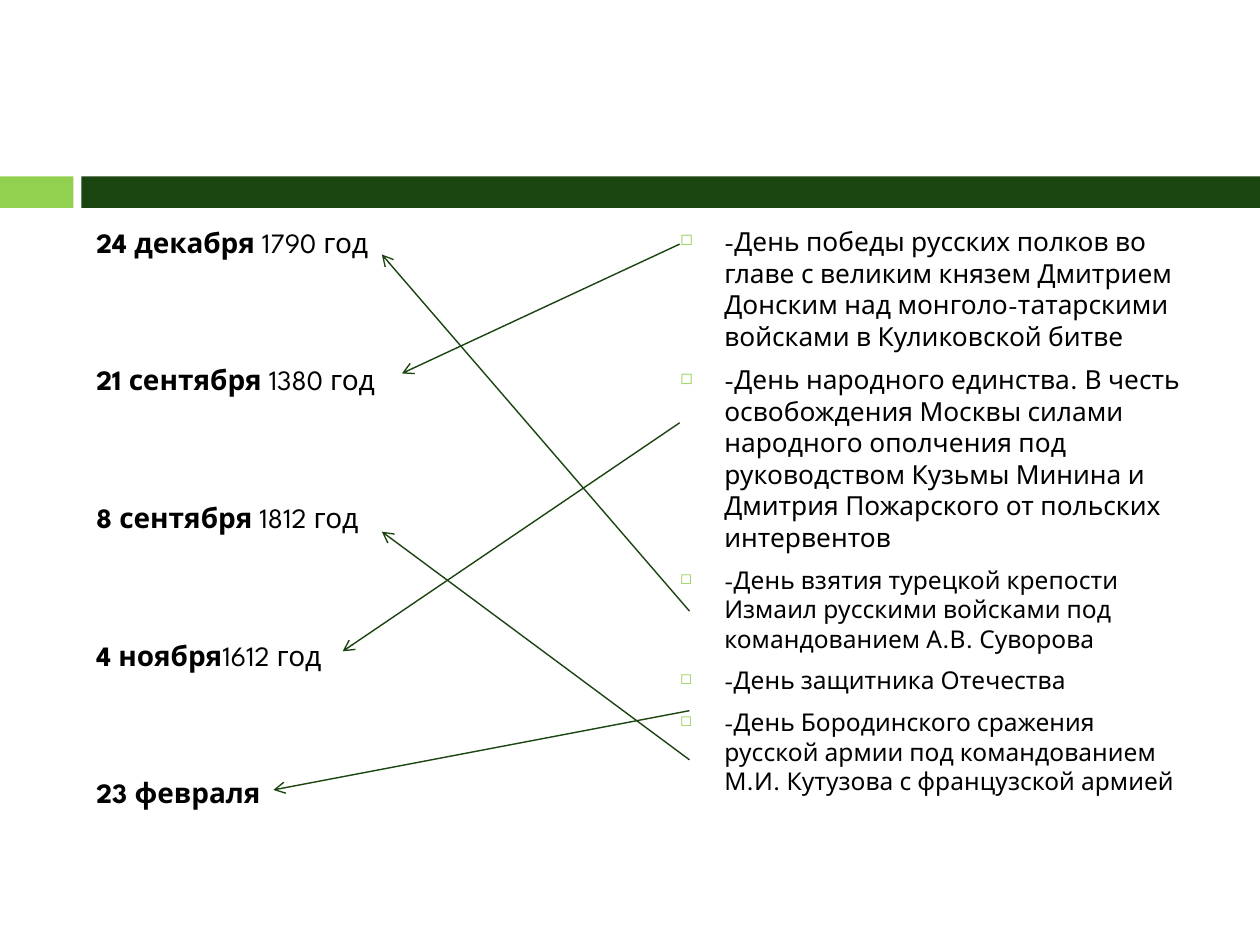
from lxml.etree import SubElement
from pptx import Presentation
from pptx.dml.color import RGBColor
from pptx.enum.shapes import MSO_CONNECTOR as CONN, MSO_SHAPE as SHAPE
from pptx.oxml.ns import qn
from pptx.util import Pt

FONT = "League Spartan"
GREEN, LIME, BLACK = "1A4410", "92D050", "000000"
TEXT_TOP, TEXT_WIDTH = 125.3, 306

DATES = [
    ("24 декабря", " 1790 год"),
    ("21 сентября", " 1380 год"),
    ("8 сентября", " 1812 год"),
    ("4 ноября", "1612 год"),
    ("23 февраля", ""),
]
EVENTS = [
    ("-День победы русских полков во главе с великим князем Дмитрием Донским "
     "над монголо-татарскими войсками в Куликовской битве", 15),
    ("-День народного единства. В честь освобождения Москвы силами народного "
     "ополчения под руководством Кузьмы Минина и Дмитрия Пожарского "
     "от польских интервентов", 15),
    ("-День взятия турецкой крепости Измаил русскими войсками "
     "под командованием А.В. Суворова", 14),
    ("-День защитника Отечества", 14),
    ("-День Бородинского сражения русской армии под командованием "
     "М.И. Кутузова с французской армией", 14),
]
# Event end, then date end, of each matching arrow
ARROWS = [
    (388.4, 139.5, 229.7, 213.4),
    (388.4, 241.6, 195.8, 372.2),
    (394, 349.2, 218.2, 145.4),
    (394, 406.1, 156.2, 451.4),
    (394, 434.2, 218.2, 303.8),
]


def color(hex_value):
    return RGBColor.from_string(hex_value)


def add_bar(slide, left, width, fill):
    s = slide.shapes.add_shape(SHAPE.RECTANGLE, Pt(left), Pt(100.8), Pt(width), Pt(18))
    s.shadow.inherit = False
    s.fill.solid()
    s.fill.fore_color.rgb = color(fill)
    s.line.fill.background()


def add_column(slide, left, height):
    s = slide.shapes.add_textbox(Pt(left), Pt(TEXT_TOP), Pt(TEXT_WIDTH), Pt(height))
    s.text_frame.word_wrap = True
    return s.text_frame


def add_paragraph(tf, index, gap):
    p = tf.add_paragraph() if index else tf.paragraphs[0]
    p.space_before = Pt(gap if index else 0)
    return p


def add_run(p, text, size, bold=False):
    r = p.add_run()
    r.text = text
    for name, value in {"name": FONT, "size": Pt(size), "bold": bold}.items():
        setattr(r.font, name, value)
    r.font.color.rgb = color(BLACK)


def add_bullet(p):
    pPr = p._p.get_or_add_pPr()
    pPr.set("marL", str(Pt(25.2)))
    pPr.set("indent", str(Pt(-25.2)))
    SubElement(SubElement(pPr, qn("a:buClr")), qn("a:srgbClr"), val=LIME)
    SubElement(pPr, qn("a:buSzPct"), val="60000")
    SubElement(pPr, qn("a:buChar"), char="◻")


def add_arrow(slide, *points):
    s = slide.shapes.add_connector(CONN.STRAIGHT, *map(Pt, points))
    s.line.color.rgb = color(GREEN)
    s.line.width = Pt(0.79)
    SubElement(s.line._get_or_add_ln(), qn("a:tailEnd"), type="arrow")
    SubElement(s._element.spPr, qn("a:effectLst"))


def main():
    prs = Presentation()
    prs.slide_width, prs.slide_height = Pt(720), Pt(540)
    slide = prs.slides.add_slide(prs.slide_layouts[6])

    # Header band
    add_bar(slide, 0, 42, LIME)
    add_bar(slide, 46.5, 673.5, GREEN)

    # Dates
    tf = add_column(slide, 48, 414.7)
    for i, (day, year) in enumerate(DATES):
        p = add_paragraph(tf, i, 59.4)
        add_run(p, day, 16, bold=True)
        if year:
            add_run(p, year, 16)

    # Events
    tf = add_column(slide, 381.6, 400.3)
    for i, (event, size) in enumerate(EVENTS):
        p = add_paragraph(tf, i, 7)
        add_bullet(p)
        add_run(p, event, size)

    # Matches
    for points in ARROWS:
        add_arrow(slide, *points)

    prs.save("out.pptx")


if __name__ == "__main__":
    main()
